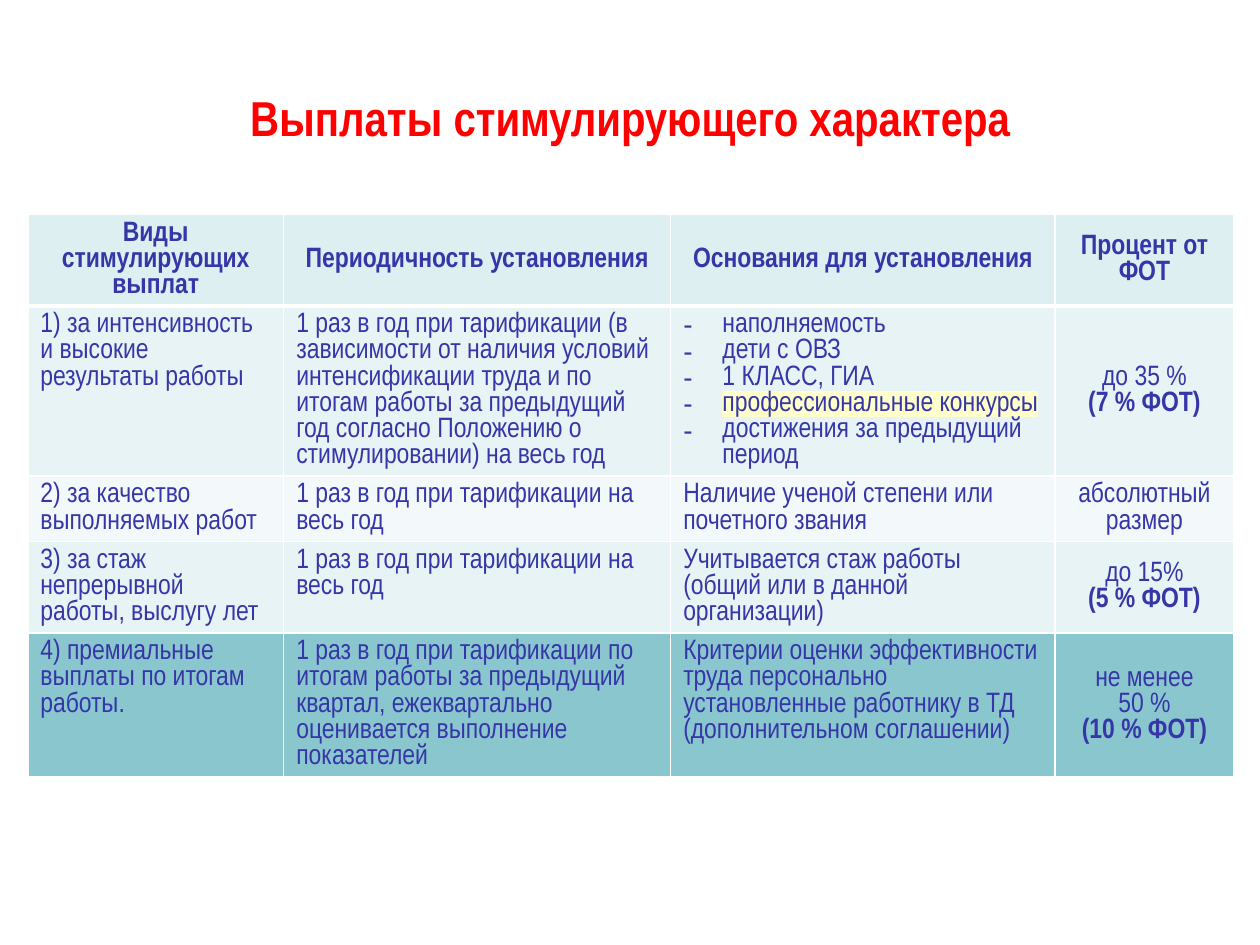
import pptx
import pptx.dml.color
import pptx.enum.text
import pptx.oxml.ns
import pptx.util
from lxml import etree

Cm = pptx.util.Cm
Pt = pptx.util.Pt
ALIGN = pptx.enum.text.PP_ALIGN
ANCHOR = pptx.enum.text.MSO_ANCHOR
qn = pptx.oxml.ns.qn

FONT = "Arial Narrow"
COLORS = {
    "title": "FF0000", "text": "3636A8", "border": "FFFFFF", "highlight": "FFFFCC",
    "header": "BBE0E3", "band": "E7F3F4", "light": "F3F9FA", "total": "8AC6CD",
}
HEADER_ALPHA = 49
COLUMN_WIDTHS = [5.16, 7.8, 7.75, 3.6]
ROW_HEIGHTS = [1.04, 1.19, 1.04, 1.04, 1.04]
ROW_FILLS = ["header", "band", "light", "band", "total"]

HEADERS = ["Виды стимулирующих выплат", "Периодичность установления",
           "Основания для установления", "Процент от ФОТ"]
ONCE_A_YEAR = "1 раз в год при тарификации на весь год"
HIGHLIGHTED = "профессиональные конкурсы"
# A list in a cell holds one paragraph per item
ROWS = [
    ["1) за интенсивность и высокие результаты работы",
     "1 раз в год при тарификации (в зависимости от наличия условий интенсификации "
     "труда и по итогам работы за предыдущий год согласно Положению о стимулировании) "
     "на весь год",
     ["наполняемость", "дети с ОВЗ", "1 КЛАСС, ГИА", HIGHLIGHTED,
      "достижения за предыдущий период"],
     ["до 35 %", "(7 % ФОТ)"]],
    ["2) за качество выполняемых работ", ONCE_A_YEAR,
     "Наличие ученой степени или почетного звания", "абсолютный размер"],
    ["3) за стаж непрерывной работы, выслугу лет", ONCE_A_YEAR,
     "Учитывается стаж работы (общий или в данной организации)",
     ["до 15%", "(5 % ФОТ)"]],
    ["4) премиальные выплаты по итогам работы.",
     "1 раз в год при тарификации по итогам работы за предыдущий квартал, "
     "ежеквартально оценивается выполнение показателей",
     "Критерии оценки эффективности труда персонально установленные работнику "
     "в ТД (дополнительном соглашении)",
     ["не менее", "50 %", "(10 % ФОТ)"]],
]


def rgb(name):
    return pptx.dml.color.RGBColor.from_string(COLORS[name])


def add_color(parent, name):
    return etree.SubElement(parent, qn("a:srgbClr"), val=COLORS[name])


def add_run(paragraph, text, size, color, bold=False):
    run = paragraph.add_run()
    run.text = text
    run.font.size = Pt(size)
    run.font.bold = bold
    run.font.color.rgb = rgb(color)
    run.font.name = FONT
    return run


def highlight(run):
    latin = run.font._element.find(qn("a:latin"))
    mark = etree.Element(qn("a:highlight"))
    add_color(mark, "highlight")
    latin.addprevious(mark)


def add_dash(paragraph):
    properties = paragraph._p.get_or_add_pPr()
    properties.set("marL", str(Cm(0.79)))
    properties.set("indent", str(-Cm(0.79)))
    etree.SubElement(properties, qn("a:buFont"), typeface="Arial")
    etree.SubElement(properties, qn("a:buChar"), char="-")


def set_borders(cell, widths):
    properties = cell._tc.get_or_add_tcPr()
    for side, width in widths.items():
        line = etree.SubElement(properties, qn(f"a:ln{side}"), w=str(Pt(width)))
        add_color(etree.SubElement(line, qn("a:solidFill")), "border")


def fill_cell(cell, color, alpha=None):
    cell.fill.solid()
    cell.fill.fore_color.rgb = rgb(color)
    if alpha is not None:
        value = cell._tc.tcPr.find(qn("a:solidFill")).find(qn("a:srgbClr"))
        etree.SubElement(value, qn("a:alpha"), val=str(alpha * 1000))


def write_cell(cell, content, header, centered):
    items = content if isinstance(content, list) else [content]
    dashed = len(items) > 1 and not centered
    if centered:
        cell.vertical_anchor = ANCHOR.MIDDLE
    for index, item in enumerate(items):
        frame = cell.text_frame
        paragraph = frame.add_paragraph() if index else frame.paragraphs[0]
        if dashed:
            add_dash(paragraph)
        if centered:
            paragraph.alignment = ALIGN.CENTER
        run = add_run(paragraph, item, 16, "text", header or item.startswith("("))
        if item == HIGHLIGHTED:
            highlight(run)


def add_title(slide, text):
    title = slide.shapes.title
    title.left, title.top, title.width, title.height = Cm(1.27), Cm(0.76), Cm(22.86), Cm(3.18)
    title.text_frame.vertical_anchor = ANCHOR.MIDDLE
    paragraph = title.text_frame.paragraphs[0]
    paragraph.alignment = ALIGN.CENTER
    add_run(paragraph, text, 28, "title", bold=True)


def add_payment_table(slide):
    contents = [HEADERS] + ROWS
    height = Cm(14.15)
    frame = slide.shapes.add_table(len(contents), len(HEADERS), Cm(0.56), Cm(4.32),
                                   Cm(sum(COLUMN_WIDTHS)), height)
    table = frame.table
    table.horz_banding = False
    for column, width in zip(table.columns, COLUMN_WIDTHS):
        column.width = Cm(width)
    for row, row_height in zip(table.rows, ROW_HEIGHTS):
        row.height = Cm(row_height)
    frame.height = height

    for row_index, row in enumerate(contents):
        header = row_index == 0
        for column_index, content in enumerate(row):
            cell = table.cell(row_index, column_index)
            # The rule under the header is thicker than the others
            set_borders(cell, {"L": 1, "R": 1, "T": 3 if row_index == 1 else 1,
                               "B": 3 if header else 1})
            fill_cell(cell, ROW_FILLS[row_index], HEADER_ALPHA if header else None)
            write_cell(cell, content, header, header or column_index == len(HEADERS) - 1)


def main():
    presentation = pptx.Presentation()
    presentation.slide_width, presentation.slide_height = Cm(25.4), Cm(19.05)
    slide = presentation.slides.add_slide(presentation.slide_layouts[5])
    add_title(slide, "Выплаты стимулирующего характера")
    add_payment_table(slide)
    presentation.save("out.pptx")


if __name__ == "__main__":
    main()
